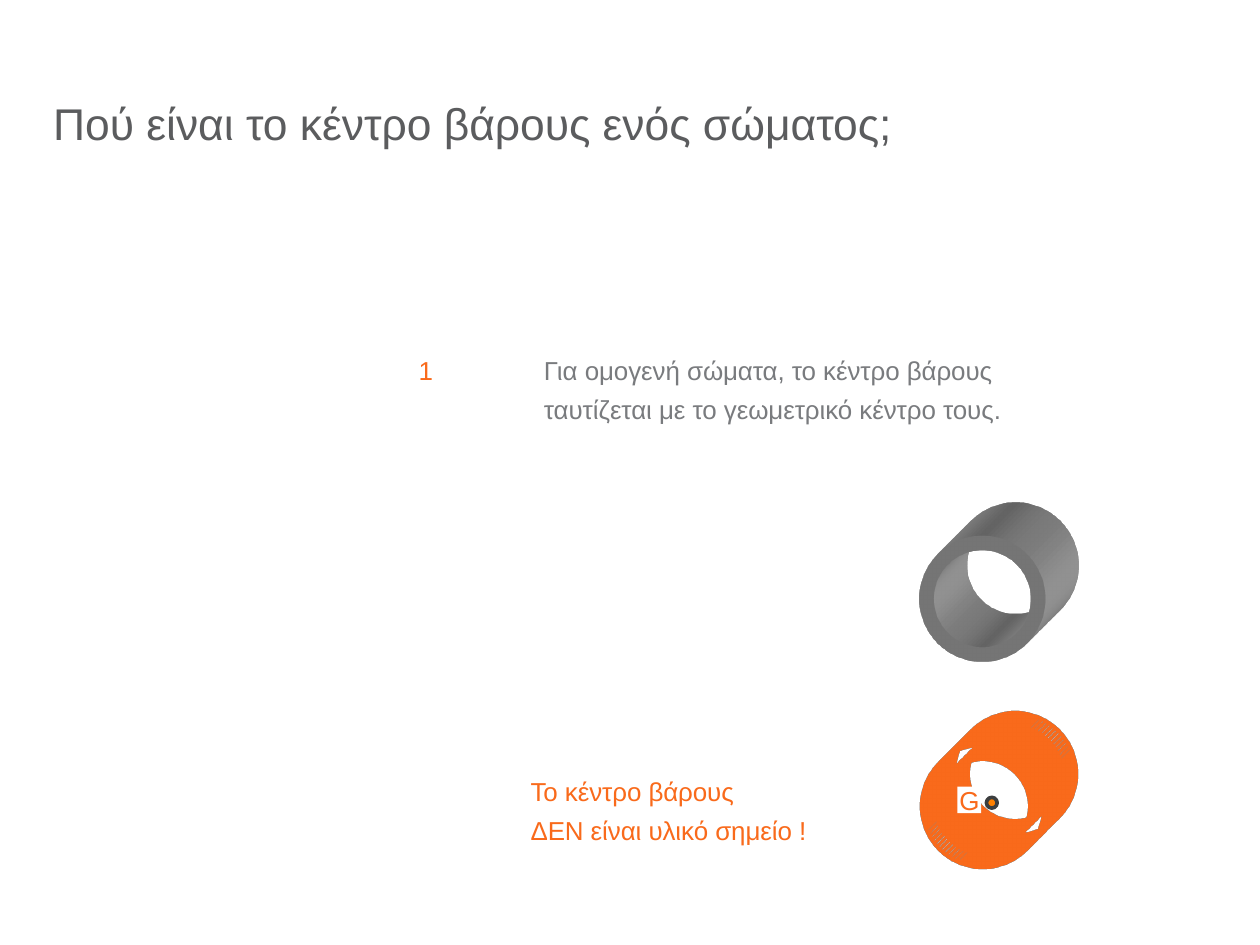
from dataclasses import dataclass

import pptx
import pptx.dml.color
import pptx.enum.shapes
import pptx.enum.text
import pptx.oxml
import pptx.oxml.ns
import pptx.util
from lxml import etree

Inches = pptx.util.Inches
Align = pptx.enum.text.PP_ALIGN
Anchor = pptx.enum.text.MSO_ANCHOR
Shape = pptx.enum.shapes.MSO_SHAPE
Box = tuple[float, float, float, float]

COLORS = {
    "title": "5B5C5E", "body": "797B7E", "orange": "F96A1B", "white": "FFFFFF",
    "dot": "FF8000", "rim": "3C3E3F", "solid": "A6A6A6", "wire": "7F7F7F",
}
SIDE = 0.47
WALL = 0.055 / SIDE
DEPTH = Inches(0.35)
TAB = Inches(0.47)


@dataclass
class Label:
    text: str
    box: Box
    size: float
    tint: str
    anchor: Anchor = Anchor.TOP


@dataclass
class Tube:
    top: float
    fill: str
    stuff: str


LABELS = [
    Label("Πού είναι το κέντρο βάρους ενός σώματος;", (0.2, 0.2, 4.33, 0.47),
          12, "title", Anchor.MIDDLE),
    Label("1\tΓια ομογενή σώματα, το κέντρο βάρους\n"
          "\tταυτίζεται με το γεωμετρικό κέντρο τους.",
          (1.57, 1.3, 2.95, 2.05), 7, "body"),
    Label("Το κέντρο βάρους\nΔΕΝ είναι υλικό σημείο !", (1.99, 2.88, 1.13, 0.31),
          7, "orange"),
]
TUBES = [Tube(2.79, "wire", "legacyWireframe"), Tube(2.01, "solid", "legacyMatte")]


def color(name: str) -> pptx.dml.color.RGBColor:
    return pptx.dml.color.RGBColor.from_string(COLORS[name])


def write(frame, text: str, *, size: float, tint: str, lead: str = "orange",
          anchor=Anchor.TOP, align=Align.LEFT, spacing: float = 1.25) -> None:
    """Fill a text frame by lines; what stands before a tab takes the lead colour."""
    frame.word_wrap = True
    frame.vertical_anchor = anchor
    frame.margin_left = frame.margin_right = 0
    frame.margin_top = frame.margin_bottom = 0
    for row, line in enumerate(text.split("\n")):
        para = frame.add_paragraph() if row else frame.paragraphs[0]
        para.alignment = align
        para.line_spacing = spacing
        head, tab, rest = line.partition("\t")
        parts = [(head, lead), (tab + rest, tint)] if tab else [(line, tint)]
        if tab:
            stops = etree.SubElement(para._p.get_or_add_pPr(),
                                     pptx.oxml.ns.qn("a:tabLst"))
            etree.SubElement(stops, pptx.oxml.ns.qn("a:tab"), pos=str(TAB), algn="l")
        for words, name in parts:
            if words:
                run = para.add_run()
                run.text = words
                run.font.name = "Arial"
                run.font.size = pptx.util.Pt(size)
                run.font.color.rgb = color(name)


def draw(slide, kind: Shape, box: Box, fill: str, line: str | None = None):
    shape = slide.shapes.add_shape(kind, *map(Inches, box))
    shape.shadow.inherit = False
    shape.fill.solid()
    shape.fill.fore_color.rgb = color(fill)
    if line:
        shape.line.color.rgb = color(line)
        shape.line.width = pptx.util.Pt(1)
    else:
        shape.line.fill.background()
    return shape


def extrude(shape, tube: Tube) -> None:
    """Give the ring its depth, towards the top right."""
    space = pptx.oxml.ns.nsdecls("a")
    scene = (f'<a:scene3d {space}><a:camera prst="legacyObliqueTopRight"/>'
             '<a:lightRig rig="legacyFlat3" dir="b"/></a:scene3d>')
    solid = (f'<a:sp3d {space} extrusionH="{DEPTH}" prstMaterial="{tube.stuff}">'
             f'<a:extrusionClr><a:srgbClr val="{COLORS[tube.fill]}"/>'
             '</a:extrusionClr></a:sp3d>')
    for part in (scene, solid):
        shape._element.spPr.append(pptx.oxml.parse_xml(part))


def main() -> None:
    deck = pptx.Presentation()
    deck.slide_width = pptx.util.Emu(4321175)
    deck.slide_height = pptx.util.Emu(3240088)
    slide = deck.slides.add_slide(deck.slide_layouts[6])
    for label in LABELS[:2]:
        add_label(slide, label)
    for tube in TUBES:
        ring = draw(slide, Shape.DONUT, (3.45, tube.top, SIDE, SIDE),
                    tube.fill, "orange")
        ring.adjustments[0] = WALL
        extrude(ring, tube)
    draw(slide, Shape.OVAL, (3.7, 2.99, 0.04, 0.04), "dot", "rim")
    mark = draw(slide, Shape.RECTANGLE, (3.59, 2.95, 0.09, 0.1), "white")
    write(mark.text_frame, "G", size=7, tint="orange", anchor=Anchor.MIDDLE,
          align=Align.CENTER, spacing=1.0)
    add_label(slide, LABELS[2])
    deck.save("out.pptx")


def add_label(slide, label: Label) -> None:
    box = slide.shapes.add_textbox(*map(Inches, label.box))
    write(box.text_frame, label.text, size=label.size, tint=label.tint,
          anchor=label.anchor)


if __name__ == "__main__":
    main()
